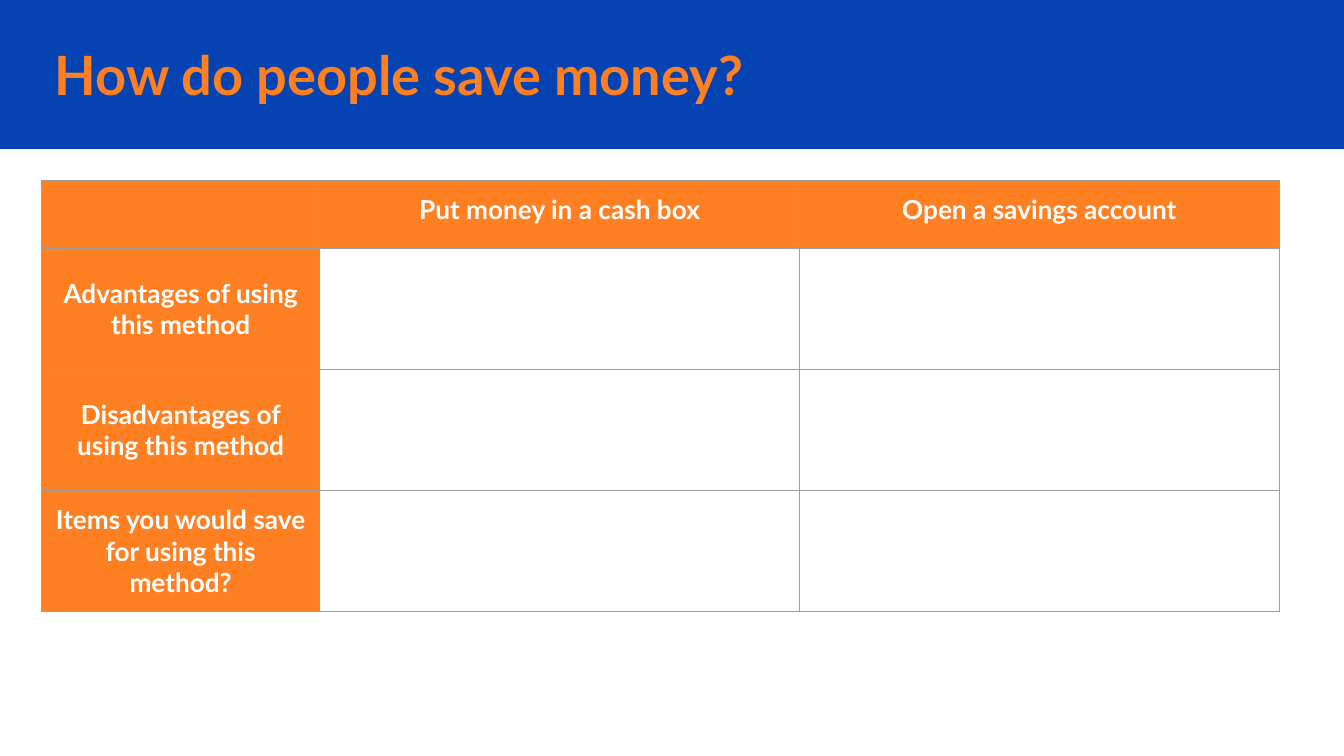
from lxml.etree import SubElement
from pptx import Presentation
from pptx.dml.color import RGBColor
from pptx.enum.shapes import MSO_SHAPE as Shape
from pptx.enum.text import MSO_ANCHOR as Anchor, PP_ALIGN as Align
from pptx.oxml.ns import qn
from pptx.util import Inches, Pt

BLUE, ORANGE, WHITE, GREY = "0543B3", "FF8022", "FFFFFF", "9E9E9E"
WIDTH = Inches(10)
COLS = [2.07, 3.57, 3.57]
ROWS = [0.51, 0.9, 0.9, 0.9]
HEADS = ["", "Put money in a cash box", "Open a savings account"]
SIDES = [
    "Advantages of using this method",
    "Disadvantages of using this method",
    "Items you would save for using this method?",
]


def paint(fill, color):
    fill.solid()
    fill.fore_color.rgb = RGBColor.from_string(color)


def write(para, text, size, color):
    run = para.add_run()
    run.text = text
    font = run.font
    font.name, font.size, font.bold = "Lato", Pt(size), True
    font.color.rgb = RGBColor.from_string(color)


def pad(box):
    """Give a cell or text frame equal margins."""
    box.margin_left = box.margin_right = Inches(0.1)
    box.margin_top = box.margin_bottom = Inches(0.1)


def add_band(slide):
    band = slide.shapes.add_shape(
        Shape.RECTANGLE, 0, 0, WIDTH, Inches(1.11))
    band.shadow.inherit = False
    paint(band.fill, BLUE)
    band.line.fill.background()


def add_title(slide, text):
    box = slide.shapes.add_textbox(
        Inches(0.31), Inches(0.27), Inches(8.46), Inches(0.56))
    frame = box.text_frame
    frame.word_wrap = True
    frame.vertical_anchor = Anchor.MIDDLE
    pad(frame)
    write(frame.paragraphs[0], text, 29, ORANGE)


def edge(cell):
    """Draw thin grey borders; they must come before the fill."""
    props = cell._tc.get_or_add_tcPr()
    for side in ("lnL", "lnR", "lnT", "lnB"):
        line = SubElement(props, qn(f"a:{side}"), w=str(Pt(0.75)))
        fill = SubElement(line, qn("a:solidFill"))
        SubElement(fill, qn("a:srgbClr"), val=GREY)


def label(cell, text):
    paint(cell.fill, ORANGE)
    para = cell.text_frame.paragraphs[0]
    para.alignment = Align.CENTER
    if text:
        write(para, text, 14, WHITE)


def add_grid(slide):
    table = slide.shapes.add_table(
        len(ROWS), len(COLS), Inches(0.31), Inches(1.34),
        Inches(sum(COLS)), Inches(sum(ROWS))).table
    table.first_row = table.horz_banding = False
    for col, width in zip(table.columns, COLS):
        col.width = Inches(width)
    for row, height in zip(table.rows, ROWS):
        row.height = Inches(height)
    for cell in table.iter_cells():
        edge(cell)
        pad(cell)
        cell.fill.background()
    for i, text in enumerate(HEADS):
        label(table.cell(0, i), text)
    for i, text in enumerate(SIDES, 1):
        label(table.cell(i, 0), text)
    for i in (1, 2):
        table.cell(i, 0).vertical_anchor = Anchor.MIDDLE


def main():
    deck = Presentation()
    deck.slide_width, deck.slide_height = WIDTH, WIDTH * 9 // 16
    slide = deck.slides.add_slide(deck.slide_layouts[6])
    paint(slide.background.fill, WHITE)
    add_band(slide)
    add_grid(slide)
    add_title(slide, "How do people save money?")
    deck.save("out.pptx")


if __name__ == "__main__":
    main()
